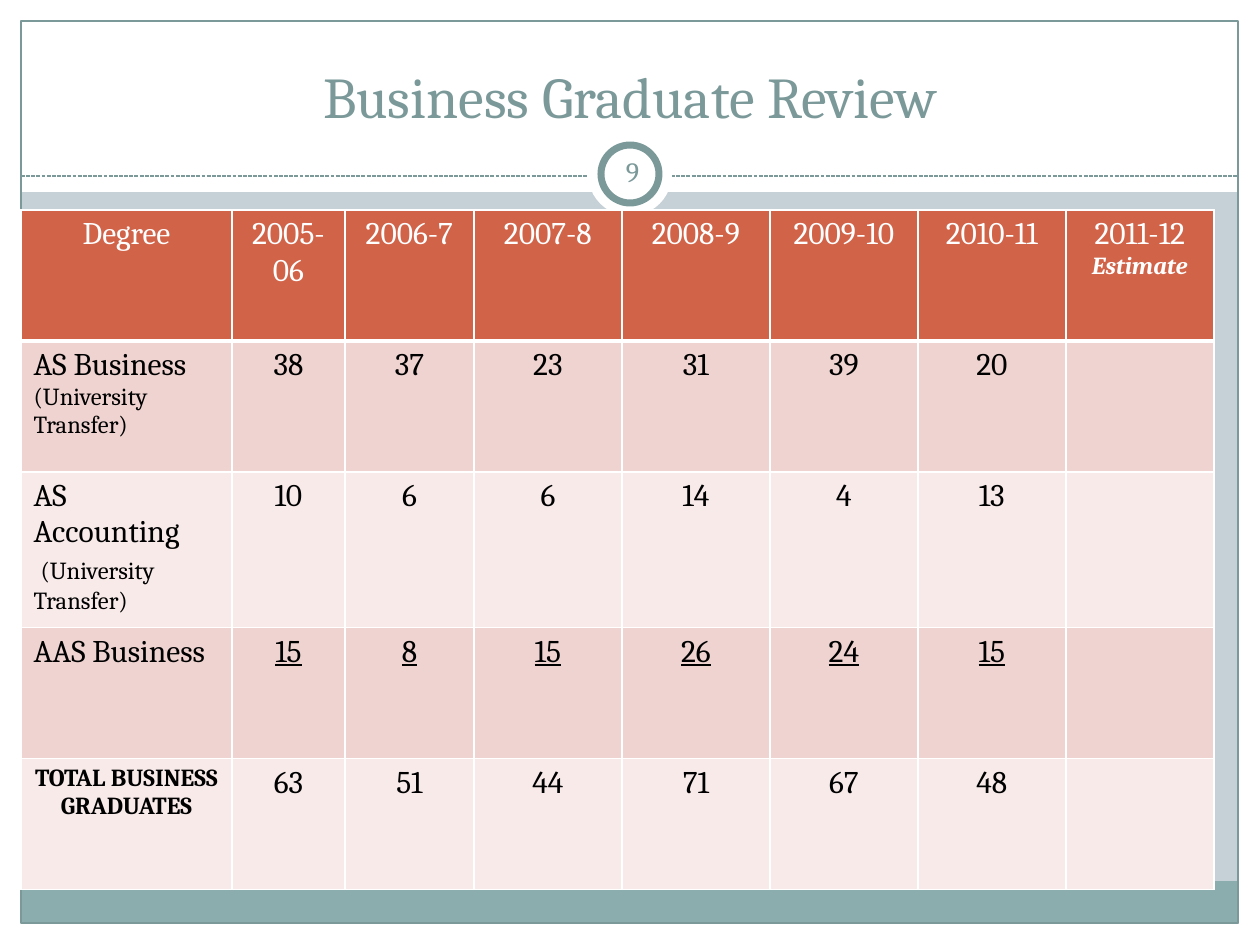
from dataclasses import dataclass

from lxml.etree import SubElement
from pptx import Presentation
from pptx.dml.color import RGBColor
from pptx.enum.dml import MSO_LINE
from pptx.enum.shapes import MSO_CONNECTOR, MSO_SHAPE
from pptx.enum.text import MSO_ANCHOR, PP_ALIGN
from pptx.oxml.ns import qn
from pptx.util import Emu, Pt

EMU_PER_PX = 914400 / 126


@dataclass(frozen=True)
class Theme:
    font: str = "Cambria"
    white: str = "FFFFFF"
    black: str = "000000"
    backdrop: str = "C5D1D7"
    accent: str = "7C999A"
    footer: str = "8CADAE"
    header: str = "D16349"
    bands: tuple = ("EED3D0", "F7EAE9")
    title_size: int = 33
    number_size: int = 16
    cell_size: int = 18
    note_size: int = 14


def px(n):
    return Emu(round(n * EMU_PER_PX))


def rgb(color):
    return RGBColor.from_string(color)


class SlideBuilder:
    def __init__(self, slide, theme):
        self.s = slide
        self.theme = theme
        fill = slide.background.fill
        fill.solid()
        fill.fore_color.rgb = rgb(theme.backdrop)

    def style(self, p, size, color, align=PP_ALIGN.CENTER, bold=False, underline=False):
        p.alignment = align
        p.font.name = self.theme.font
        p.font.size = Pt(size)
        p.font.bold = bold
        p.font.underline = underline
        p.font.color.rgb = rgb(color)

    def shape(self, kind, box, fill=None, line=None, width=0.75):
        sp = self.s.shapes.add_shape(kind, *map(px, box))
        sp.shadow.inherit = False
        if fill:
            sp.fill.solid()
            sp.fill.fore_color.rgb = rgb(fill)
        else:
            sp.fill.background()
        if line:
            sp.line.color.rgb = rgb(line)
            sp.line.width = Pt(width)
        else:
            sp.line.fill.background()

    def dashed_line(self, x1, y1, x2, y2):
        line = self.s.shapes.add_connector(MSO_CONNECTOR.STRAIGHT, *map(px, (x1, y1, x2, y2)))
        line.line.color.rgb = rgb(self.theme.accent)
        line.line.width = Pt(0.75)
        line.line.dash_style = MSO_LINE.SQUARE_DOT
        SubElement(line.element.spPr, qn("a:effectLst"))

    def title(self, text, box):
        sp = self.s.shapes.title
        sp.element.getparent().append(sp.element)  # in front of the frame
        sp.left, sp.top, sp.width, sp.height = map(px, box)
        tf = sp.text_frame
        tf.text = text
        tf.vertical_anchor = MSO_ANCHOR.BOTTOM
        self.style(tf.paragraphs[0], self.theme.title_size, self.theme.accent)

    def slide_number(self, text, box):
        tf = self.s.shapes.add_textbox(*map(px, box)).text_frame
        tf.word_wrap = True
        tf.vertical_anchor = MSO_ANCHOR.MIDDLE
        tf.margin_left = tf.margin_right = tf.margin_top = tf.margin_bottom = px(6)
        tf.text = text
        self.style(tf.paragraphs[0], self.theme.number_size, self.theme.accent)

    def borders(self, cell, bottom):
        tc_pr = cell._tc.get_or_add_tcPr()
        for side, width in (("L", 1), ("R", 1), ("T", 1), ("B", bottom)):
            ln = SubElement(tc_pr, qn(f"a:ln{side}"), w=str(Pt(width)))
            fill = SubElement(ln, qn("a:solidFill"))
            SubElement(fill, qn("a:srgbClr"), val=self.theme.white)

    def cell(self, cell, text, note, fill, bottom=1, note_style=False, **style):
        """Fill one cell; the note follows the text in the smaller size."""
        self.borders(cell, bottom)
        cell.fill.solid()
        cell.fill.fore_color.rgb = rgb(fill)
        p = cell.text_frame.paragraphs[0]
        self.style(p, **style)
        for i, part in enumerate(text.split("\n")):
            if i:
                p.add_line_break()
            if part:
                p.add_run().text = part
        if note:
            r = p.add_run()
            r.text = note
            r.font.size = Pt(self.theme.note_size)
            if note_style:
                r.font.bold = r.font.italic = True

    def table(self, left, top, widths, row_height, header, rows):
        t = self.theme
        frame = self.s.shapes.add_table(len(rows) + 1, len(widths), px(left), px(top),
                                        px(sum(widths)), px(row_height * (len(rows) + 1)))
        table = frame.table
        table.first_row = table.horz_banding = False
        for col, width in zip(table.columns, widths):
            col.width = px(width)
        for row in table.rows:
            row.height = px(row_height)
        for c, (text, note) in enumerate(header):
            self.cell(table.cell(0, c), text, note, t.header, bottom=3, note_style=True,
                      size=t.cell_size, color=t.white)
        for r, (label, note, values, label_style, underline) in enumerate(rows, 1):
            fill = t.bands[(r - 1) % 2]
            style = {"size": t.cell_size, "color": t.black, "align": PP_ALIGN.LEFT}
            self.cell(table.cell(r, 0), label, note, fill, **(style | label_style))
            for c in range(1, len(widths)):
                value = str(values[c - 1]) if c <= len(values) else ""
                self.cell(table.cell(r, c), value, "", fill, size=t.cell_size,
                          color=t.black, underline=underline)


def main():
    theme = Theme()
    prs = Presentation()
    prs.slide_width, prs.slide_height = px(1260), px(945)
    b = SlideBuilder(prs.slides.add_slide(prs.slide_layouts[5]), theme)

    margins = ((0, 924, 1260, 21), (0, 0, 1260, 192), (0, 0, 21, 945), (1239, 0, 21, 945))
    for box in margins:
        b.shape(MSO_SHAPE.RECTANGLE, box, theme.white)
    b.shape(MSO_SHAPE.RECTANGLE, (21, 881, 1217, 43), theme.footer)
    b.shape(MSO_SHAPE.RECTANGLE, (21, 21, 1217, 902), line=theme.accent)
    b.dashed_line(21, 176, 1239, 176)
    b.shape(MSO_SHAPE.OVAL, (588, 132, 84, 84), theme.white)
    b.shape(MSO_SHAPE.OVAL, (601, 145, 58, 58), theme.white, theme.accent, 4)

    b.title("Business Graduate Review", (42, 31, 1176, 105))
    b.slide_number("9", (601, 141, 63, 60))

    years = ("2005-06", "2006-7", "2007-8", "2008-9", "2009-10", "2010-11")
    header = [("Degree", ""), *((year, "") for year in years), ("2011-12\n", "Estimate")]
    total = {"size": theme.note_size, "bold": True, "align": PP_ALIGN.CENTER}
    transfer = "(University Transfer)"
    rows = [
        ("AS Business ", transfer, (38, 37, 23, 31, 39, 20), {}, False),
        ("AS Accounting\n ", transfer, (10, 6, 6, 14, 4, 13), {}, False),
        ("AAS Business", "", (15, 8, 15, 26, 24, 15), {}, True),
        ("TOTAL BUSINESS GRADUATES", "", (63, 51, 44, 71, 67, 48), total, False),
    ]
    b.table(21, 210, [211, 113, 129] + [148] * 5, 131, header, rows)
    prs.save("out.pptx")


if __name__ == "__main__":
    main()
